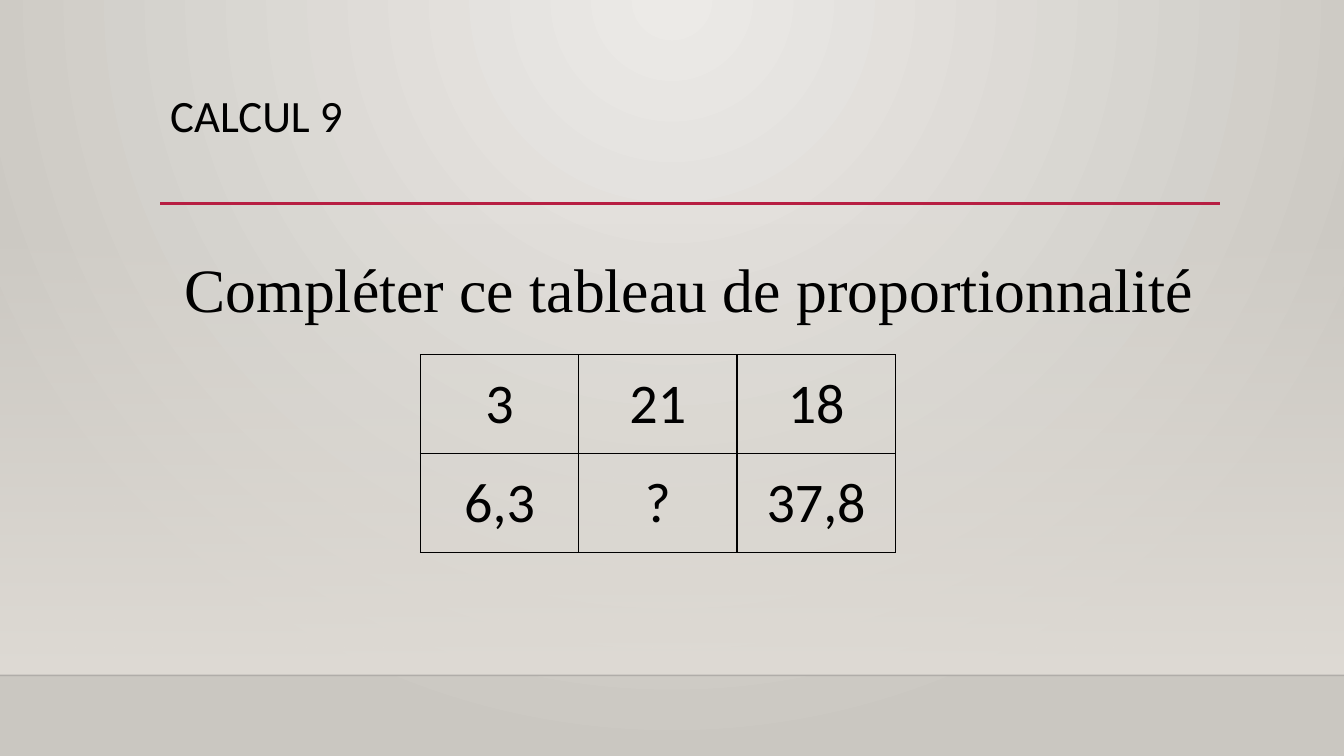
from dataclasses import dataclass
from typing import Optional

from lxml import etree
from pptx import Presentation
from pptx.dml.color import RGBColor
from pptx.enum.shapes import MSO_CONNECTOR, MSO_SHAPE
from pptx.enum.text import MSO_ANCHOR, PP_ALIGN
from pptx.oxml.ns import qn
from pptx.util import Inches, Pt

STRAIGHT = MSO_CONNECTOR.STRAIGHT
RECTANGLE = MSO_SHAPE.RECTANGLE
TOP, MIDDLE = MSO_ANCHOR.TOP, MSO_ANCHOR.MIDDLE
LEFT, CENTER = PP_ALIGN.LEFT, PP_ALIGN.CENTER

BLACK = RGBColor(0x00, 0x00, 0x00)
FLOOR_EDGE = RGBColor(0x00, 0x00, 0x01)
CRIMSON = RGBColor(0xB7, 0x1E, 0x42)
WALL_LIGHT = RGBColor(0xEC, 0xEA, 0xE7)
WALL_DARK = RGBColor(0xCA, 0xC7, 0xC1)
HAZE = RGBColor(0xDF, 0xDB, 0xD5)

SLIDE_WIDTH, SLIDE_HEIGHT = 13.33, 7.5
FLOOR_TOP = 6.7
VALUES = [["3", "21", "18"], ["6,3", "?", "37,8"]]
COLUMN_WIDTH, ROW_HEIGHT = 1.57, 0.98


@dataclass(frozen=True)
class Rule:
    left: float
    right: float
    y: float
    color: RGBColor
    weight: float
    opacity: Optional[int] = None


@dataclass(frozen=True)
class TextBlock:
    text: str
    top: float
    height: float
    font: str
    size: int
    align: PP_ALIGN
    line_spacing: float
    margin_top: float


RULES = [
    Rule(0, SLIDE_WIDTH, FLOOR_TOP, FLOOR_EDGE, 1, 20),
    Rule(1.59, 12.1, 2.02, CRIMSON, 2.5),
]
TEXT_BLOCKS = [
    TextBlock("CALCUL 9", 0.88, 1.15, "Calibri", 32, LEFT, 0.9, 0.05),
    TextBlock("Compléter ce tableau de proportionnalité", 2.2, 3.77,
              "Times New Roman", 44, CENTER, 1.2, 0.14),
]


def add_alpha(color_element, percent: int) -> None:
    etree.SubElement(color_element, qn("a:alpha"), val=str(percent * 1000))


def set_stops(gradient, start: RGBColor, end: RGBColor, start_opacity: int = 100) -> None:
    """Replace the default stops of a gradient fill and drop its direction."""
    for child in list(gradient):
        gradient.remove(child)
    stops = etree.SubElement(gradient, qn("a:gsLst"))
    for position, color, opacity in ((0, start, start_opacity), (100, end, 100)):
        stop = etree.SubElement(stops, qn("a:gs"), pos=str(position * 1000))
        color_element = etree.SubElement(stop, qn("a:srgbClr"), val=str(color))
        if opacity < 100:
            add_alpha(color_element, opacity)


def paint_wall(slide) -> None:
    slide.background.fill.gradient()
    gradient = slide.element.find(".//" + qn("a:gradFill"))
    set_stops(gradient, WALL_LIGHT, WALL_DARK)
    circle = etree.SubElement(gradient, qn("a:path"), path="circle")
    etree.SubElement(circle, qn("a:fillToRect"), l="43000", t="0", r="43000", b="100000")


def add_haze(slide) -> None:
    top = 2.21
    haze = slide.shapes.add_shape(RECTANGLE, 0, Inches(top), Inches(SLIDE_WIDTH),
                                  Inches(FLOOR_TOP - top))
    haze.shadow.inherit = False
    haze.line.fill.background()
    haze.fill.gradient()
    gradient = haze.element.find(".//" + qn("a:gradFill"))
    set_stops(gradient, HAZE, HAZE, 0)
    etree.SubElement(gradient, qn("a:lin"), ang="5400000", scaled="0")


def add_rule(slide, rule: Rule) -> None:
    line = slide.shapes.add_connector(STRAIGHT, Inches(rule.left), Inches(rule.y),
                                      Inches(rule.right), Inches(rule.y))
    line.line.color.rgb = rule.color
    line.line.width = Pt(rule.weight)
    if rule.opacity is not None:
        add_alpha(line.element.find(".//" + qn("a:srgbClr")), rule.opacity)
    etree.SubElement(line.element.spPr, qn("a:effectLst"))


def add_span(para, text: str, font: str, size: int) -> None:
    span = para.add_run()
    span.text = text
    span.font.name = font
    span.font.size = Pt(size)
    span.font.color.rgb = BLACK


def add_text(slide, block: TextBlock) -> None:
    box = slide.shapes.add_textbox(Inches(1.59), Inches(block.top),
                                   Inches(10.5), Inches(block.height))
    frame = box.text_frame
    frame.word_wrap = True
    frame.vertical_anchor = TOP
    frame.margin_top = Inches(block.margin_top)
    para = frame.paragraphs[0]
    para.alignment = block.align
    para.line_spacing = block.line_spacing
    add_span(para, block.text, block.font, block.size)


def add_borders(cell) -> None:
    properties = cell._tc.get_or_add_tcPr()
    for index, side in enumerate(("lnL", "lnR", "lnT", "lnB")):
        border = etree.Element(qn("a:" + side), w=str(Pt(1)))
        fill = etree.SubElement(border, qn("a:solidFill"))
        etree.SubElement(fill, qn("a:srgbClr"), val=str(BLACK))
        properties.insert(index, border)


def add_proportion_table(slide) -> None:
    rows, columns = len(VALUES), len(VALUES[0])
    table = slide.shapes.add_table(rows, columns, Inches(4.17), Inches(3.52),
                                   Inches(columns * COLUMN_WIDTH),
                                   Inches(rows * ROW_HEIGHT)).table
    table.first_row = False
    table.horz_banding = False
    for column in table.columns:
        column.width = Inches(COLUMN_WIDTH)
    for row, values in zip(table.rows, VALUES):
        row.height = Inches(ROW_HEIGHT)
        for cell, value in zip(row.cells, values):
            cell.fill.background()
            cell.vertical_anchor = MIDDLE
            add_borders(cell)
            para = cell.text_frame.paragraphs[0]
            para.alignment = CENTER
            add_span(para, value, "Calibri", 40)


def main() -> None:
    deck = Presentation()
    deck.slide_width = Inches(SLIDE_WIDTH)
    deck.slide_height = Inches(SLIDE_HEIGHT)
    page = deck.slides.add_slide(deck.slide_layouts[6])
    paint_wall(page)
    add_haze(page)
    for rule in RULES:
        add_rule(page, rule)
    for block in TEXT_BLOCKS:
        add_text(page, block)
    add_proportion_table(page)
    deck.save("out.pptx")


if __name__ == "__main__":
    main()
